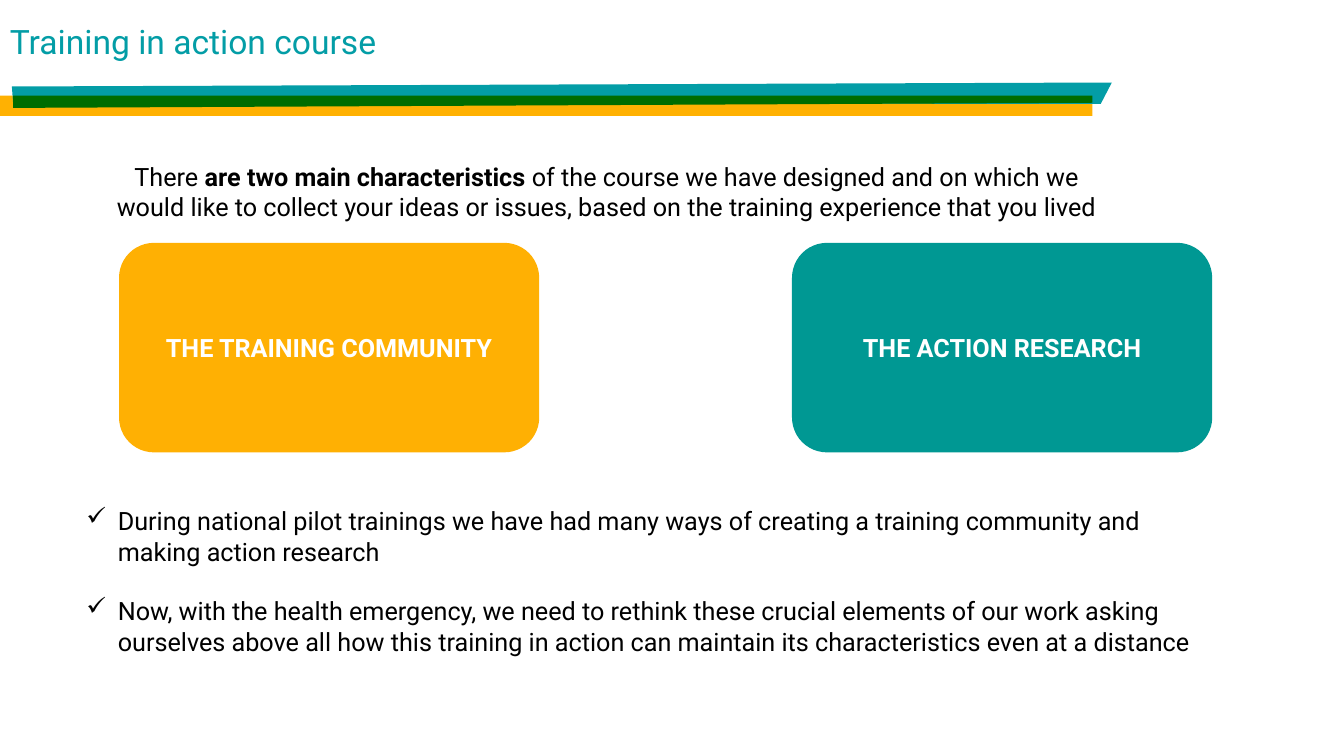
from lxml import etree
from pptx import Presentation, util as u
from pptx.dml.color import RGBColor
from pptx.enum import shapes, text
from pptx.oxml.ns import qn

TEAL = RGBColor(0x03, 0x9D, 0xA6)
AMBER = RGBColor(0xFF, 0xB1, 0x02)
GREEN = RGBColor(0x00, 0x6C, 0x00)
CARD_AMBER = RGBColor(0xFF, 0xB0, 0x03)
CARD_TEAL = RGBColor(0x00, 0x98, 0x93)
BLACK = RGBColor(0, 0, 0)
WHITE = RGBColor(255, 255, 255)

TITLE = "Training in action course"
INTRO = [
    ("There ", False),
    ("are two main characteristics ", True),
    ("of the course we have designed and on which we would like to collect "
     "your ideas or issues, based on the training experience that you lived", False),
]
CARDS = [("THE TRAINING COMMUNITY", CARD_AMBER), ("THE ACTION RESEARCH", CARD_TEAL)]
POINTS = [
    "During national pilot trainings we have had many ways of creating a "
    "training community and making action research",
    "Now, with the health emergency, we need to rethink these crucial elements "
    "of our work asking ourselves above all how this training in action can "
    "maintain its characteristics even at a distance",
]
RIBBONS = [
    (TEAL, [(0.3, 2.18), (28.02, 2.08), (27.74, 2.62), (0.33, 2.59)]),
    (GREEN, [(0.33, 2.41), (27.53, 2.41), (27.53, 2.59), (0.33, 2.72)]),
]
BAR_BOX = (0, 2.41, 27.53, 0.51)
TITLE_BOX = (0, 0.41, 28.63, 1.27)
INTRO_BOX = (2.26, 3.94, 26.06, 1.8)
POINTS_BOX = (1.93, 12.62, 28.63, 4.11)
CARD_LEFT, CARD_TOP, CARD_WIDTH, CARD_HEIGHT, CARD_STEP = 3, 6.12, 10.59, 5.28, 16.96
BULLET_INDENT = u.Cm(0.79)
POINT_GAP = u.Pt(21.1)


def lengths(values):
    return [u.Cm(value) for value in values]


def paint(shape, color):
    shape.shadow.inherit = False
    shape.fill.solid()
    shape.fill.fore_color.rgb = color
    shape.line.fill.background()


def add_filled(page, kind, area, color):
    shape = page.shapes.add_shape(kind, *lengths(area))
    paint(shape, color)
    return shape


def add_box(page, area):
    box = page.shapes.add_textbox(*lengths(area))
    box.text_frame.word_wrap = True
    return box.text_frame


def write(para, content, color, **format_values):
    span = para.add_run()
    span.text = content
    span.font.color.rgb = color
    values = {"name": "Roboto", "size": u.Pt(18), "bold": False, **format_values}
    for name, value in values.items():
        setattr(span.font, name, value)


def add_bullet(para):
    properties = para._p.get_or_add_pPr()
    properties.set("marL", str(BULLET_INDENT))
    properties.set("indent", str(-BULLET_INDENT))
    etree.SubElement(properties, qn("a:buChar")).set("char", "✓")


def main():
    deck = Presentation()
    deck.slide_width, deck.slide_height = lengths((33.87, 19.05))
    page = deck.slides.add_slide(deck.slide_layouts[6])

    add_filled(page, shapes.MSO_SHAPE.RECTANGLE, BAR_BOX, AMBER)
    for color, corners in RIBBONS:
        start, *rest = [lengths(corner) for corner in corners]
        outline = page.shapes.build_freeform(*start)
        outline.add_line_segments(rest, close=True)
        paint(outline.convert_to_shape(), color)

    write(add_box(page, TITLE_BOX).paragraphs[0], TITLE, TEAL, size=u.Pt(24))

    intro = add_box(page, INTRO_BOX).paragraphs[0]
    intro.alignment = text.PP_ALIGN.CENTER
    for content, bold in INTRO:
        write(intro, content, BLACK, bold=bold)

    for index, (label, color) in enumerate(CARDS):
        area = (CARD_LEFT + index * CARD_STEP, CARD_TOP, CARD_WIDTH, CARD_HEIGHT)
        card = add_filled(page, shapes.MSO_SHAPE.ROUNDED_RECTANGLE, area, color)
        frame = card.text_frame
        frame.word_wrap = True
        frame.vertical_anchor = text.MSO_ANCHOR.MIDDLE
        frame.paragraphs[0].alignment = text.PP_ALIGN.CENTER
        write(frame.paragraphs[0], label, WHITE, bold=True)

    frame = add_box(page, POINTS_BOX)
    for index, content in enumerate(POINTS):
        para = frame.add_paragraph() if index else frame.paragraphs[0]
        add_bullet(para)
        if index:
            para.space_before = POINT_GAP
        write(para, content, BLACK)

    deck.save("out.pptx")


if __name__ == "__main__":
    main()
